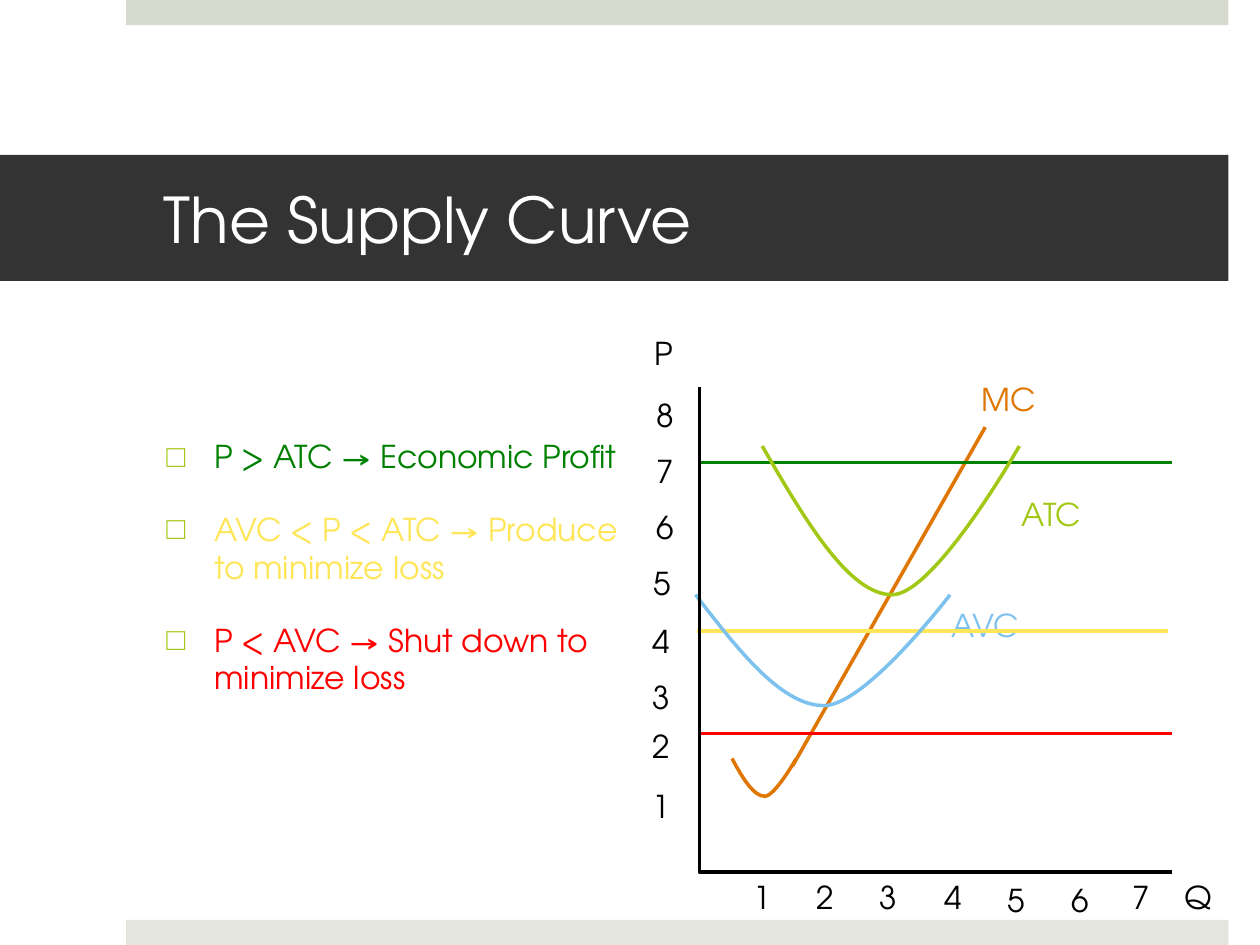
from dataclasses import dataclass

from lxml.etree import SubElement as Sub
from pptx import Presentation
from pptx.dml.color import RGBColor as RGB
from pptx.enum.shapes import MSO_CONNECTOR as Link, MSO_SHAPE as Form
from pptx.enum.text import MSO_ANCHOR as Anchor, MSO_AUTO_SIZE as Fit, PP_ALIGN as Align
from pptx.oxml.ns import qn
from pptx.util import Inches, Pt


@dataclass
class Theme:
    font: str = "TeX Gyre Adventor"
    head: int = 36
    text: int = 18
    line: int = 2
    white: str = "FFFFFF"
    black: str = "000000"
    dark: str = "333333"
    top: str = "D6D9CD"
    base: str = "E4E6DE"
    lime: str = "A2C816"
    blue: str = "7DC1EF"
    rust: str = "E07602"
    green: str = "008000"
    gold: str = "FEE658"
    red: str = "FF0000"


theme = Theme()


def write(para, text, color, size=theme.text):
    run = para.add_run()
    run.text = text
    run.font.name = theme.font
    run.font.size = Pt(size)
    run.font.color.rgb = RGB.from_string(color)


def ink(line, color):
    line.color.rgb = RGB.from_string(color)
    line.width = Pt(theme.line)


deck = Presentation()
deck.slide_width, deck.slide_height = Inches(10), Inches(7.5)
slide = deck.slides.add_slide(deck.slide_layouts[1])
shapes = slide.shapes

for top, color in [(0, theme.top), (7.3, theme.base)]:
    bar = shapes.add_shape(Form.RECTANGLE, Inches(1), Inches(top), Inches(8.75), Inches(0.2))
    bar.shadow.inherit = False
    bar.fill.solid()
    bar.fill.fore_color.rgb = RGB.from_string(color)
    bar.line.fill.background()

title = shapes.title
title.left, title.top = Inches(0), Inches(1.23)
title.width, title.height = Inches(9.75), Inches(1)
title.fill.solid()
title.fill.fore_color.rgb = RGB.from_string(theme.dark)
frame = title.text_frame
frame.auto_size = Fit.NONE
frame.vertical_anchor = Anchor.MIDDLE
frame.margin_left, frame.margin_right = Inches(1.3), Inches(0.3)
frame.paragraphs[0].alignment = Align.LEFT
write(frame.paragraphs[0], "The Supply Curve", theme.white, theme.head)

body = slide.placeholders[1]
body.left, body.top = Inches(1.22), Inches(2.84)
body.width, body.height = Inches(3.9), Inches(4.03)
frame = body.text_frame
frame.auto_size = Fit.NONE
frame.vertical_anchor = Anchor.TOP
frame.margin_top = Inches(0.63)
rules = [
    ("P > ATC → Economic Profit", theme.green),
    ("AVC < P < ATC → Produce to minimize loss", theme.gold),
    ("P < AVC → Shut down to minimize loss", theme.red),
]
for row, (text, color) in enumerate(rules):
    para = frame.add_paragraph() if row else frame.paragraphs[0]
    para.space_before = Pt(20 if row else 0)
    write(para, text, color)
    props = para._p.get_or_add_pPr()
    props.set("marL", str(Inches(0.38)))
    props.set("indent", str(-Inches(0.38)))
    Sub(Sub(props, qn("a:buClr")), qn("a:srgbClr"), val=theme.lime)
    Sub(props, qn("a:buChar"), char="□")

labels = [
    ("P", 5.1, 2.6, 0.47, 0.58, theme.black),
    ("Q", 9.3, 6.92, 0.42, 0.4, theme.black),
]
for num, left in enumerate([5.88, 6.38, 6.88, 7.4, 7.9, 8.41, 8.89], 1):
    top = 6.94 if num in (5, 6) else 6.92
    labels.append((str(num), left, top, 0.46, 0.58, theme.black))
for num, top in enumerate([6.2, 5.72, 5.33, 4.89, 4.43, 3.98, 3.54, 3.09], 1):
    left = 5.08 if num < 5 else 5.09 if num == 5 else 5.11
    labels.append((str(num), left, top, 0.46, 0.58, theme.black))
labels += [
    ("MC", 7.69, 2.97, 0.64, 0.4, theme.rust),
    ("ATC", 8.01, 3.88, 0.68, 0.4, theme.lime),
    ("AVC", 7.45, 4.76, 0.74, 0.4, theme.blue),
]
for text, left, top, width, height, color in labels:
    box = shapes.add_textbox(Inches(left), Inches(top), Inches(width), Inches(height))
    box.text_frame.word_wrap = False
    box.text_frame.auto_size = Fit.SHAPE_TO_FIT_TEXT
    write(box.text_frame.paragraphs[0], text, color)

lines = [
    (6.29, 6.08, 7.82, 3.39, theme.rust),
    (5.56, 3.67, 9.3, 3.67, theme.green),
    (5.53, 5.01, 9.27, 5.01, theme.gold),
    (5.56, 5.82, 9.3, 5.82, theme.red),
]
for *ends, color in lines:
    line = shapes.add_connector(Link.STRAIGHT, *[Inches(end) for end in ends])
    ink(line.line, color)
    Sub(line._element.spPr, qn("a:effectLst"))

paths = [
    ([(6.05, 3.54), (6.39, 4.13), (6.74, 4.72), (7.08, 4.72),
      (7.42, 4.72), (8.09, 3.54), (8.09, 3.54)], theme.lime, True),
    ([(5.52, 4.72), (5.86, 5.16), (6.2, 5.6), (6.54, 5.6),
      (6.87, 5.6), (7.54, 4.72), (7.54, 4.72)], theme.blue, True),
    ([(5.81, 6.02), (5.89, 6.17), (5.98, 6.32), (6.07, 6.32),
      (6.15, 6.32), (6.32, 6.02), (6.32, 6.02)], theme.rust, True),
    ([(5.55, 3.07), (5.55, 6.92), (9.3, 6.92)], theme.black, False),
]
for knots, color, bent in paths:
    spots = [(Inches(x), Inches(y)) for x, y in knots]
    pen = shapes.build_freeform(*spots[0])
    pen.add_line_segments(spots[1:], close=False)
    curve = pen.convert_to_shape()
    curve.shadow.inherit = False
    curve.fill.background()
    ink(curve.line, color)
    if bent:
        track = next(curve._element.iter(qn("a:path")))
        legs = track.findall(qn("a:lnTo"))
        for start in range(0, len(legs), 3):
            arc = Sub(track, qn("a:cubicBezTo"))
            for leg in legs[start:start + 3]:
                arc.append(leg[0])
                track.remove(leg)

deck.save("out.pptx")
